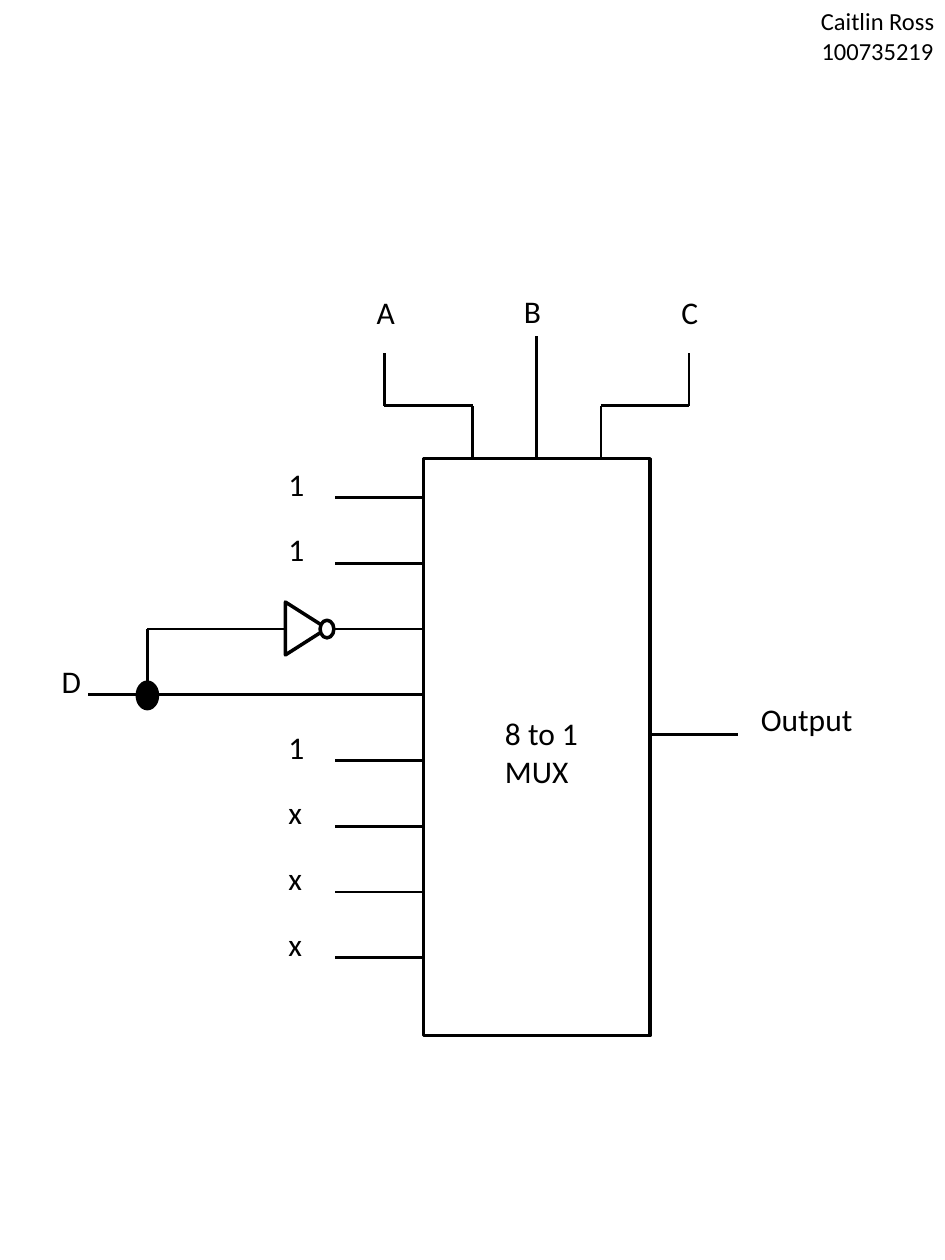
from dataclasses import dataclass

from lxml.etree import SubElement
from pptx import Presentation
from pptx.dml.color import RGBColor
from pptx.enum.shapes import MSO_CONNECTOR as Connector, MSO_SHAPE as Preset
from pptx.enum.text import PP_ALIGN as Align
from pptx.oxml.ns import qn
from pptx.util import Inches, Pt

COLORS = {"ink": "000000", "paper": "FFFFFF"}
FONT = "Calibri"

MUX_LEFT, MUX_TOP, MUX_WIDTH, MUX_HEIGHT = 3.36, 3.64, 1.8, 4.58
MUX_RIGHT = MUX_LEFT + MUX_WIDTH
MUX_CENTER = MUX_LEFT + MUX_WIDTH / 2
INPUTS = ["1", "1", "inverted D", "D", "1", "x", "x", "x"]
INPUT_TOP, INPUT_BOTTOM = 3.95, 7.6
INPUT_PITCH = (INPUT_BOTTOM - INPUT_TOP) / (len(INPUTS) - 1)
INPUT_LEFT, INPUT_LABEL_LEFT = 2.66, 2.19
LABEL_RISE = 0.31
BRANCH_X, INVERTER_LEFT = 1.17, 2.27
SELECT_BEND = 3.22


@dataclass
class Label:
    text: str
    left: float
    top: float
    width: float = 0.39
    height: float = 0.4


@dataclass
class Part:
    preset: Preset
    left: float
    top: float
    width: float
    height: float
    fill: str = ""
    rotation: float = 0


def color(name: str) -> RGBColor:
    return RGBColor.from_string(COLORS[name])


def add_run(para, text: str, size: float) -> None:
    span = para.add_run()
    span.text = text
    span.font.name = FONT
    span.font.size = Pt(size)
    span.font.color.rgb = color("ink")


def draw_label(page, label: Label) -> None:
    box = page.shapes.add_textbox(Inches(label.left), Inches(label.top),
                                  Inches(label.width), Inches(label.height))
    box.text_frame.word_wrap = True
    add_run(box.text_frame.paragraphs[0], label.text, 18)


def draw_part(page, part: Part) -> None:
    shape = page.shapes.add_shape(part.preset, Inches(part.left), Inches(part.top),
                                  Inches(part.width), Inches(part.height))
    shape.rotation = part.rotation
    shape.shadow.inherit = False
    shape.line.color.rgb = color("ink")
    shape.line.width = Pt(2)
    if part.fill:
        shape.fill.solid()
        shape.fill.fore_color.rgb = color(part.fill)
    else:
        shape.fill.background()


def draw_wire(page, *points: tuple[float, float]) -> None:
    for start, end in zip(points, points[1:]):
        wire = page.shapes.add_connector(Connector.STRAIGHT, *map(Inches, start + end))
        wire.line.color.rgb = color("ink")
        wire.line.width = Pt(1.5)
        SubElement(wire._element.spPr, qn("a:effectLst"))


def draw_author(page) -> None:
    box = page.shapes.add_textbox(Inches(6.41), Inches(0), Inches(1.11), Inches(0.57))
    frame = box.text_frame
    frame.word_wrap = False
    for index, text in enumerate(["Caitlin Ross", "100735219"]):
        para = frame.add_paragraph() if index else frame.paragraphs[0]
        para.alignment = Align.CENTER
        add_run(para, text, 14)


def draw_multiplexer(page) -> None:
    draw_part(page, Part(Preset.RECTANGLE, MUX_LEFT, MUX_TOP, MUX_WIDTH, MUX_HEIGHT))
    draw_label(page, Label("8 to 1 MUX", 3.91, 5.62, 0.86, 1.31))
    draw_wire(page, (MUX_RIGHT, 5.83), (MUX_RIGHT + 0.7, 5.83))
    draw_label(page, Label("Output", 5.94, 5.51, 1.09, 0.71))


def draw_selects(page) -> None:
    for side in (-1, 1):
        inner, outer = MUX_CENTER + side * 0.51, MUX_CENTER + side * 1.21
        draw_wire(page, (inner, MUX_TOP), (inner, SELECT_BEND),
                  (outer, SELECT_BEND), (outer, 2.8))
    draw_wire(page, (MUX_CENTER, MUX_TOP), (MUX_CENTER, 2.67))
    for label in (Label("A", 2.89, 2.28), Label("B", 4.06, 2.27), Label("C", 5.31, 2.28)):
        draw_label(page, label)


def draw_inputs(page) -> None:
    for index, name in enumerate(INPUTS):
        y = INPUT_TOP + index * INPUT_PITCH
        if name == "D":
            draw_wire(page, (0.7, y), (MUX_LEFT, y))
            draw_wire(page, (BRANCH_X, y), (BRANCH_X, y - INPUT_PITCH),
                      (INVERTER_LEFT, y - INPUT_PITCH))
            draw_part(page, Part(Preset.OVAL, BRANCH_X - 0.08, y - 0.1, 0.16, 0.21, "ink"))
            draw_label(page, Label(name, 0.39, y - LABEL_RISE))
            continue
        draw_wire(page, (INPUT_LEFT, y), (MUX_LEFT, y))
        if name == "inverted D":
            draw_part(page, Part(Preset.ISOSCELES_TRIANGLE, 2.22, y - 0.17, 0.42, 0.33,
                                 rotation=90))
            draw_part(page, Part(Preset.OVAL, 2.54, y - 0.07, 0.11, 0.14, "paper"))
        else:
            draw_label(page, Label(name, INPUT_LABEL_LEFT, y - LABEL_RISE))


def main() -> None:
    deck = Presentation()
    deck.slide_width, deck.slide_height = Inches(7.5), Inches(10)
    page = deck.slides.add_slide(deck.slide_layouts[6])
    draw_multiplexer(page)
    draw_selects(page)
    draw_inputs(page)
    draw_author(page)
    deck.save("out.pptx")


if __name__ == "__main__":
    main()
